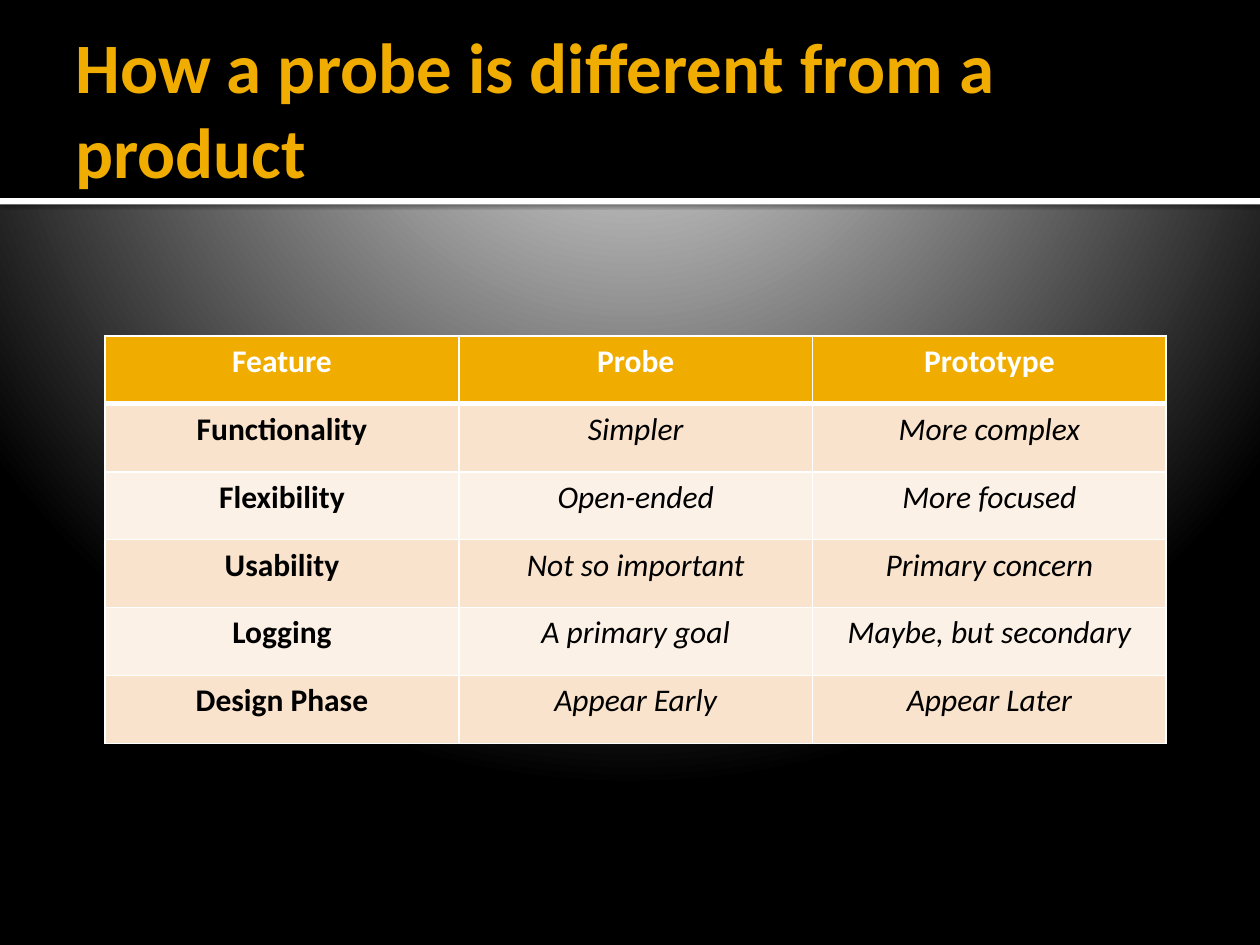
from lxml import etree
from pptx import Presentation
from pptx.dml.color import RGBColor
from pptx.enum.shapes import MSO_SHAPE
from pptx.enum.text import MSO_ANCHOR, PP_ALIGN
from pptx.oxml import parse_xml
from pptx.oxml.ns import nsdecls, qn
from pptx.util import Cm, Pt

BLACK = RGBColor(0x00, 0x00, 0x00)
WHITE = RGBColor(0xFF, 0xFF, 0xFF)
GOLD = RGBColor(0xF0, 0xAD, 0x00)
PEACH = RGBColor(0xF9, 0xE3, 0xCC)
CREAM = RGBColor(0xFC, 0xF1, 0xE7)
SILVER = RGBColor(0xC0, 0xC0, 0xC0)
LIGHT_GRAY = RGBColor(0xBE, 0xBE, 0xBE)

FONT = "Calibri"
SLIDE_WIDTH, SLIDE_HEIGHT = Cm(25.4), Cm(19.05)
BAND_HEIGHT = Cm(3.99)

GLOW_STOPS = [(0, SILVER), (12, SILVER), (20, LIGHT_GRAY), (100, BLACK)]
COMPARISON = [
    ("Feature", "Probe", "Prototype"),
    ("Functionality", "Simpler", "More complex"),
    ("Flexibility", "Open-ended", "More focused"),
    ("Usability", "Not so important", "Primary concern"),
    ("Logging", "A primary goal", "Maybe, but secondary"),
    ("Design Phase", "Appear Early", "Appear Later"),
]


def write_text(text_frame, text, *, size, color, bold=False, italic=False,
               align=PP_ALIGN.LEFT):
    paragraph = text_frame.paragraphs[0]
    paragraph.alignment = align
    run = paragraph.add_run()
    run.text = text
    font = run.font
    font.name, font.size = FONT, Pt(size)
    font.bold, font.italic = bold, italic
    font.color.rgb = color


def set_glow_background(slide):
    stops = "".join(
        f'<a:gs pos="{position * 1000}"><a:srgbClr val="{color}"/></a:gs>'
        for position, color in GLOW_STOPS)
    background = parse_xml(
        f'<p:bg {nsdecls("p", "a")}><p:bgPr><a:gradFill rotWithShape="1">'
        f'<a:gsLst>{stops}</a:gsLst><a:path path="circle">'
        '<a:fillToRect l="10000" t="-25000" r="10000" b="125000"/></a:path>'
        '</a:gradFill><a:effectLst/></p:bgPr></p:bg>')
    slide.element.find(qn("p:cSld")).insert(0, background)


def add_band(slide, top, height, color):
    band = slide.shapes.add_shape(MSO_SHAPE.RECTANGLE, 0, top, SLIDE_WIDTH, height)
    band.shadow.inherit = False
    band.fill.solid()
    band.fill.fore_color.rgb = color
    band.line.fill.background()
    return band


def add_soft_shadow(shape):
    effects = shape.element.spPr.find(qn("a:effectLst"))
    effects.append(parse_xml(
        f'<a:outerShdw {nsdecls("a")} blurRad="{Pt(2.5)}" dist="{Pt(0.8)}" '
        f'dir="5400000" rotWithShape="0"><a:srgbClr val="{BLACK}">'
        '<a:alpha val="60000"/></a:srgbClr></a:outerShdw>'))


def add_title(slide, text):
    box = slide.shapes.add_textbox(Cm(1.27), Cm(0.43), Cm(22.86), Cm(3.48))
    frame = box.text_frame
    frame.word_wrap = True
    frame.vertical_anchor = MSO_ANCHOR.MIDDLE
    frame.margin_left = Cm(0.25)
    frame.margin_right = frame.margin_top = frame.margin_bottom = Cm(0.13)
    write_text(frame, text, size=40.5, color=GOLD, bold=True)


def set_borders(cell, widths):
    properties = cell._tc.get_or_add_tcPr()
    for index, (side, width) in enumerate(widths.items()):
        line = etree.Element(qn(f"a:{side}"), w=str(Pt(width)))
        fill = etree.SubElement(line, qn("a:solidFill"))
        etree.SubElement(fill, qn("a:srgbClr"), val=str(WHITE))
        properties.insert(index, line)


def add_comparison_table(slide, rows):
    column_count = len(rows[0])
    column_width, row_height = Cm(7.13), Cm(1.37)
    table = slide.shapes.add_table(
        len(rows), column_count, Cm(2.12), Cm(6.77),
        column_width * column_count, row_height * len(rows)).table
    for column in table.columns:
        column.width = column_width
    for row_index, values in enumerate(rows):
        table.rows[row_index].height = row_height
        is_header = row_index == 0
        fill_color = GOLD if is_header else (CREAM, PEACH)[row_index % 2]
        widths = {"lnL": 1, "lnR": 1,
                  "lnT": 3 if row_index == 1 else 1,
                  "lnB": 3 if is_header else 1}
        for column_index, value in enumerate(values):
            cell = table.cell(row_index, column_index)
            cell.fill.solid()
            cell.fill.fore_color.rgb = fill_color
            set_borders(cell, widths)
            bold = is_header or column_index == 0
            write_text(cell.text_frame, value, size=18, bold=bold,
                       italic=not bold, align=PP_ALIGN.CENTER,
                       color=WHITE if is_header else BLACK)


def main():
    presentation = Presentation()
    presentation.slide_width = SLIDE_WIDTH
    presentation.slide_height = SLIDE_HEIGHT
    slide = presentation.slides.add_slide(presentation.slide_layouts[6])

    # Background and title band with its white rule
    set_glow_background(slide)
    add_soft_shadow(add_band(slide, BAND_HEIGHT, Cm(0.13), WHITE))
    add_band(slide, 0, BAND_HEIGHT, BLACK)

    # Title and comparison
    add_title(slide, "How a probe is different from a product")
    add_comparison_table(slide, COMPARISON)

    presentation.save("out.pptx")


if __name__ == "__main__":
    main()
